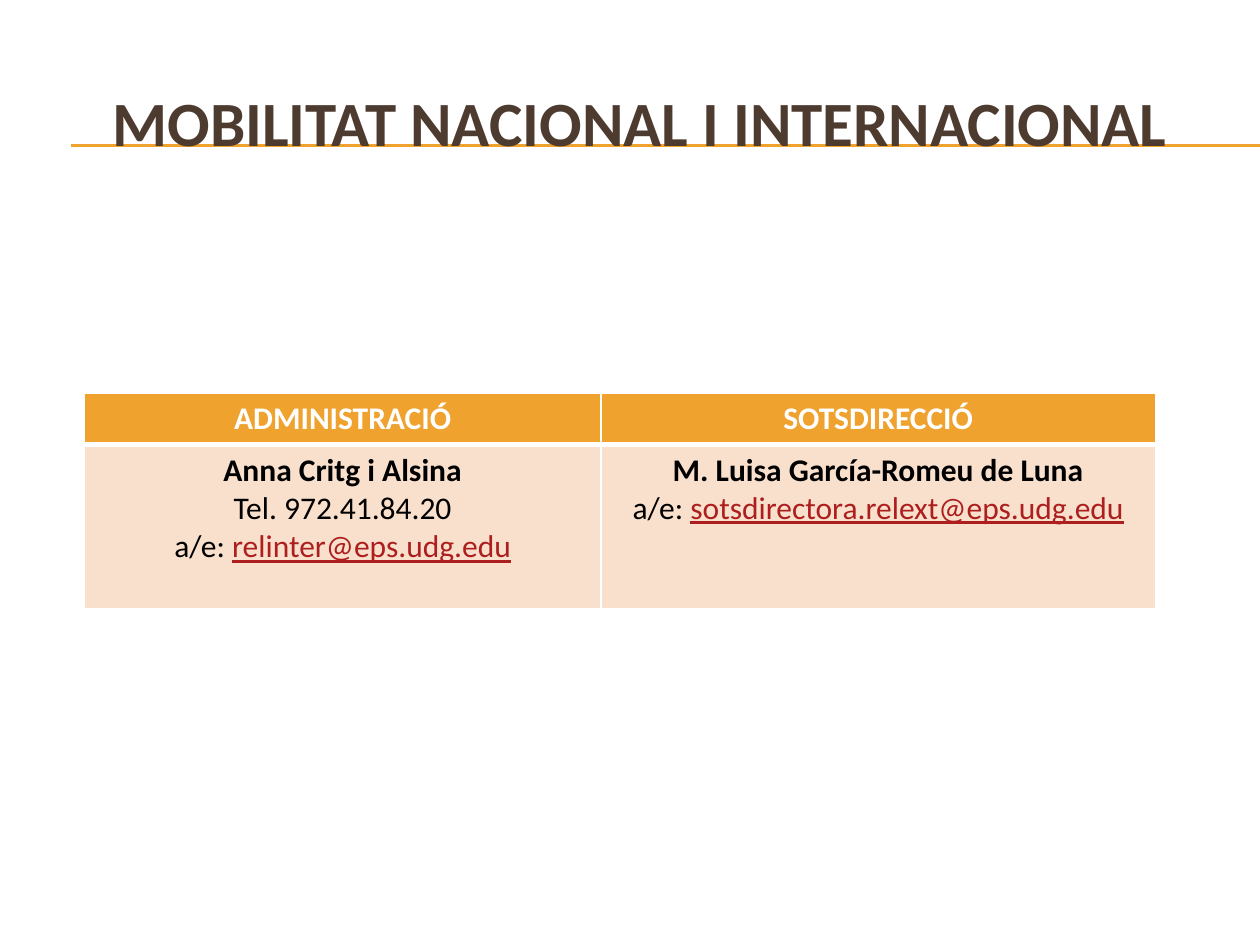
from dataclasses import dataclass

from lxml import etree
from pptx import Presentation
from pptx.dml.color import RGBColor
from pptx.enum.shapes import MSO_CONNECTOR
from pptx.enum.text import MSO_ANCHOR, PP_ALIGN
from pptx.oxml.ns import qn
from pptx.util import Inches, Pt

STRAIGHT = MSO_CONNECTOR.STRAIGHT
CENTER = PP_ALIGN.CENTER
MIDDLE = MSO_ANCHOR.MIDDLE


@dataclass(frozen=True)
class Theme:
    font: str = "Calibri"
    title_size: int = 36
    table_size: int = 18
    brown: str = "4E3B30"
    orange: str = "F0A22E"
    peach: str = "F9E0CD"
    white: str = "FFFFFF"
    black: str = "000000"
    email: str = "AD1F1F"


theme = Theme()


def add_run(paragraph, text, size, color, bold=False, underline=False):
    paragraph.alignment = CENTER
    run = paragraph.add_run()
    run.text = text
    run.font.name = theme.font
    run.font.size = Pt(size)
    run.font.bold = bold
    run.font.underline = underline
    run.font.color.rgb = RGBColor.from_string(color)


def add_border(cell, side, width):
    properties = cell._tc.get_or_add_tcPr()
    border = etree.SubElement(properties, qn(f"a:ln{side}"), w=str(Pt(width)))
    fill = etree.SubElement(border, qn("a:solidFill"))
    etree.SubElement(fill, qn("a:srgbClr"), val=theme.white)


presentation = Presentation()
presentation.slide_width = Inches(10)
presentation.slide_height = Inches(7.5)
slide = presentation.slides.add_slide(presentation.slide_layouts[5])

title = slide.shapes.title
title.left, title.top = Inches(0.33), Inches(0.5)
title.width, title.height = Inches(9.5), Inches(0.92)
title.text_frame.vertical_anchor = MIDDLE
title.text_frame.word_wrap = True
add_run(title.text_frame.paragraphs[0], "MOBILITAT NACIONAL I INTERNACIONAL",
        theme.title_size, theme.brown, bold=True)

for height in (1.15, 1.16):
    rule = slide.shapes.add_connector(
        STRAIGHT, Inches(0.56), Inches(height), Inches(10), Inches(height))
    rule.line.color.rgb = RGBColor.from_string(theme.orange)
    rule.line.width = Pt(0.75)
    etree.SubElement(rule._element.spPr, qn("a:effectLst"))
    title._element.addprevious(rule._element)

contacts = [
    ("ADMINISTRACIÓ", "Anna Critg i Alsina", "Tel. 972.41.84.20",
     "relinter@eps.udg.edu"),
    ("SOTSDIRECCIÓ", "M. Luisa García-Romeu de Luna", None,
     "sotsdirectora.relext@eps.udg.edu"),
]
column_widths = (4.1, 4.4)
row_heights = (0.41, 1.3)

table = slide.shapes.add_table(
    len(row_heights), len(contacts), Inches(0.67), Inches(3.12),
    Inches(sum(column_widths)), Inches(sum(row_heights))).table
table.horz_banding = False
for row, height in zip(table.rows, row_heights):
    row.height = Inches(height)

for index, (heading, person, phone, email) in enumerate(contacts):
    table.columns[index].width = Inches(column_widths[index])
    header, body = table.cell(0, index), table.cell(1, index)

    for cell, color, top, bottom in ((header, theme.orange, 1, 3),
                                     (body, theme.peach, 3, 1)):
        for side, width in zip("LRTB", (1, 1, top, bottom)):
            add_border(cell, side, width)
        cell.fill.solid()
        cell.fill.fore_color.rgb = RGBColor.from_string(color)

    add_run(header.text_frame.paragraphs[0], heading,
            theme.table_size, theme.white, bold=True)
    add_run(body.text_frame.paragraphs[0], person,
            theme.table_size, theme.black, bold=True)
    if phone:
        add_run(body.text_frame.add_paragraph(), phone,
                theme.table_size, theme.black)
    email_line = body.text_frame.add_paragraph()
    add_run(email_line, "a/e: ", theme.table_size, theme.black)
    add_run(email_line, email, theme.table_size, theme.email, underline=True)

presentation.save("out.pptx")
